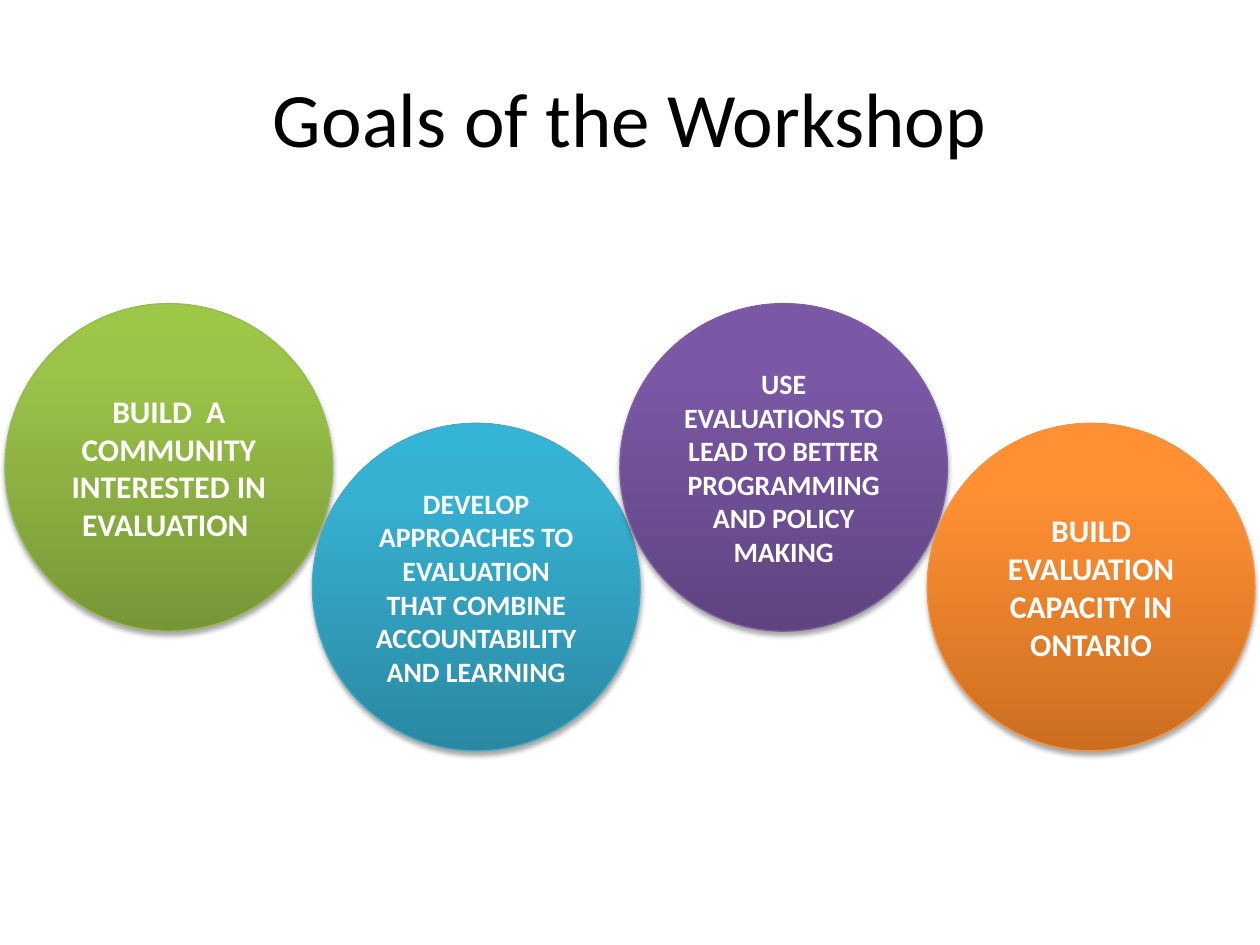
from lxml import etree
from pptx import Presentation
from pptx.dml.color import RGBColor
from pptx.enum.shapes import MSO_SHAPE
from pptx.enum.text import MSO_ANCHOR, PP_ALIGN
from pptx.oxml import parse_xml
from pptx.oxml.ns import qn
from pptx.util import Inches, Pt

OVAL = MSO_SHAPE.OVAL
MIDDLE = MSO_ANCHOR.MIDDLE
CENTER = PP_ALIGN.CENTER
NS = "http://schemas.openxmlformats.org/drawingml/2006/main"

# Each goal colour: bottom, 80 % and top of the gradient, then outline
COLORS = {
    "text": "000000",
    "label": "FFFFFF",
    "shadow": "000000",
    "green": ("779737", "9BC348", "9DC746", "98B955"),
    "blue": ("2A88A2", "37B1D2", "34B4D6", "46AAC5"),
    "purple": ("5F4480", "7B58A6", "7C57A8", "7D60A0"),
    "orange": ("CC6E20", "FF9034", "FF9136", "F69240"),
}
STOPS = (0, 80, 100)
GOALS = [
    ("BUILD  A COMMUNITY INTERESTED IN EVALUATION ", 18, "green"),
    ("DEVELOP APPROACHES TO EVALUATION THAT COMBINE "
     "ACCOUNTABILITY AND LEARNING", 16, "blue"),
    ("USE EVALUATIONS TO LEAD TO BETTER PROGRAMMING AND POLICY MAKING",
     16, "purple"),
    ("BUILD EVALUATION CAPACITY IN ONTARIO", 18, "orange"),
]
LEFT, STEP, SIZE = 0.04, 2.44, 2.6
ROWS = (2.41, 3.36)


def set_text(shape, text, color, **font):
    frame = shape.text_frame
    frame.word_wrap = True
    frame.vertical_anchor = MIDDLE
    para = frame.paragraphs[0]
    para.alignment = CENTER
    run = para.add_run()
    run.text = text
    run.font.color.rgb = RGBColor.from_string(color)
    for name, value in {"name": "Calibri", **font}.items():
        setattr(run.font, name, value)


def set_fade(shape, colors):
    """Fill the shape with a gradient that runs from bottom to top."""
    stops = "".join(
        f'<a:gs pos="{pos * 1000}"><a:srgbClr val="{color}"/></a:gs>'
        for pos, color in zip(STOPS, colors))
    fade = parse_xml(
        f'<a:gradFill xmlns:a="{NS}" rotWithShape="1"><a:gsLst>{stops}</a:gsLst>'
        '<a:lin ang="16200000" scaled="0"/></a:gradFill>')
    shape.element.spPr.find(qn("a:prstGeom")).addnext(fade)


def add_shade(shape):
    """Give the shape a soft shadow below it."""
    shape.shadow.inherit = False
    effects = shape.element.spPr.find(qn("a:effectLst"))
    shade = etree.SubElement(
        effects, qn("a:outerShdw"), blurRad=str(Pt(3.1)), dist=str(Pt(1.8)),
        dir="5400000", rotWithShape="0")
    color = etree.SubElement(shade, qn("a:srgbClr"), val=COLORS["shadow"])
    etree.SubElement(color, qn("a:alpha"), val="35000")


def add_title(slide, text):
    box = slide.shapes.add_textbox(
        Inches(0.5), Inches(0.3), Inches(9), Inches(1.25))
    set_text(box, text, COLORS["text"], size=Pt(44))


def add_goal(slide, left, top, text, size, hue):
    *fade, edge = COLORS[hue]
    disc = slide.shapes.add_shape(
        OVAL, Inches(left), Inches(top), Inches(SIZE), Inches(SIZE))
    set_fade(disc, fade)
    disc.line.color.rgb = RGBColor.from_string(edge)
    disc.line.width = Pt(0.75)
    add_shade(disc)
    set_text(disc, text, COLORS["label"], size=Pt(size), bold=True)


def main():
    deck = Presentation()
    deck.slide_width, deck.slide_height = Inches(10), Inches(7.5)
    slide = deck.slides.add_slide(deck.slide_layouts[6])
    add_title(slide, "Goals of the Workshop")
    for i, goal in enumerate(GOALS):
        add_goal(slide, LEFT + i * STEP, ROWS[i % 2], *goal)
    deck.save("out.pptx")


if __name__ == "__main__":
    main()
